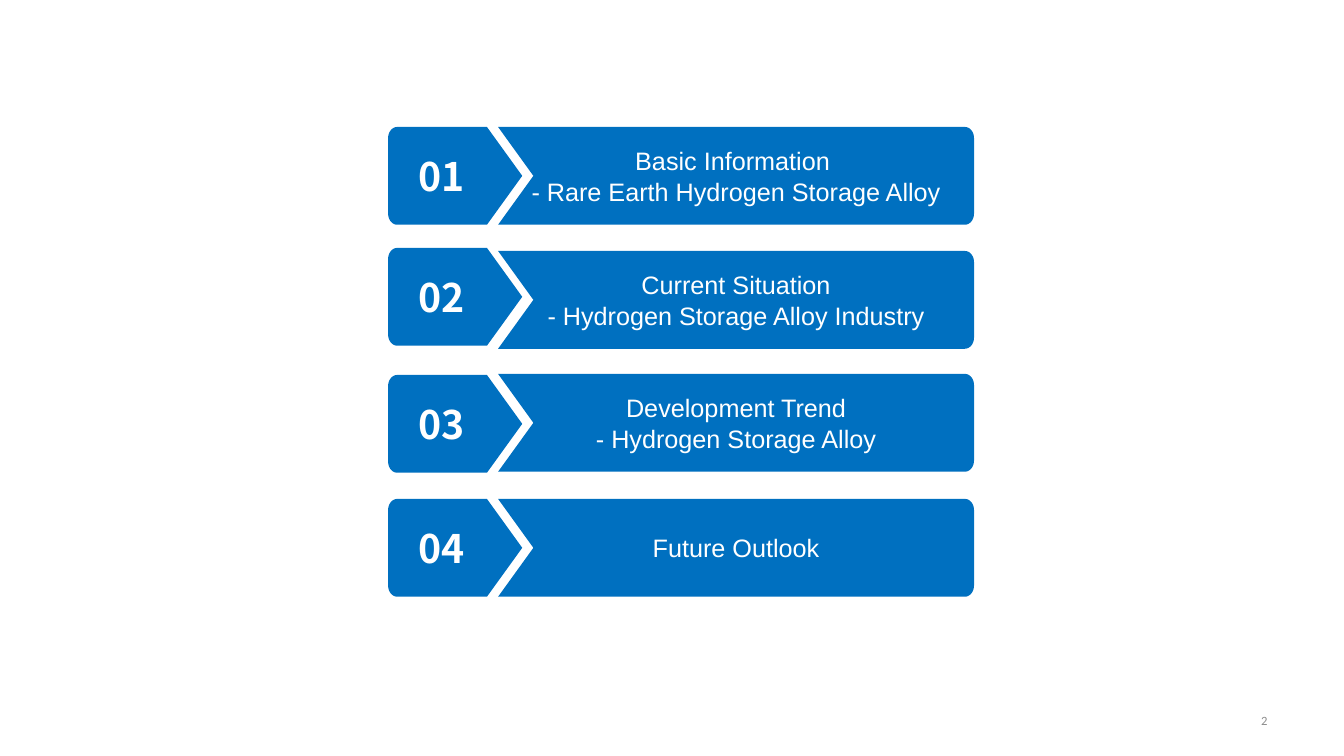
import math

import pptx
import pptx.dml.color
import pptx.enum.text
import pptx.util

PX = 9144
COLORS = {"blue": "0070C0", "white": "FFFFFF", "gray": "8C8C8C"}

LABEL_LEFT, LABEL_RIGHT = 494, 966
BADGE_LEFT, BADGE_RIGHT = 385, 518
ROW_HEIGHT = 97
POINT_DEPTH = 35
CORNER_WIDTH, CORNER_HEIGHT = 9, 11

AGENDA = [
    (126, 126, ["Basic Information ", "- Rare Earth Hydrogen Storage Alloy"]),
    (249, 246, ["Current Situation", "- Hydrogen Storage Alloy Industry"]),
    (371, 372, ["Development Trend", "- Hydrogen Storage Alloy"]),
    (495, 495, ["Future Outlook"]),
]


def px(value):
    return pptx.util.Emu(round(value * PX))


def rgb(name):
    return pptx.dml.color.RGBColor.from_string(COLORS[name])


def corner(center_x, center_y, start_angle):
    angles = [math.radians(start_angle + step * 10) for step in range(10)]
    return [
        (center_x + CORNER_WIDTH * math.cos(angle), center_y + CORNER_HEIGHT * math.sin(angle))
        for angle in angles
    ]


def label_outline(top):
    bottom = top + ROW_HEIGHT
    center_x = LABEL_RIGHT - CORNER_WIDTH
    return [
        (LABEL_LEFT, top),
        *corner(center_x, top + CORNER_HEIGHT, -90),
        *corner(center_x, bottom - CORNER_HEIGHT, 0),
        (LABEL_LEFT, bottom),
        (LABEL_LEFT + POINT_DEPTH, top + ROW_HEIGHT / 2),
    ]


def badge_outline(top):
    bottom = top + ROW_HEIGHT
    shoulder = BADGE_RIGHT - POINT_DEPTH
    center_x = BADGE_LEFT + CORNER_WIDTH
    return [
        (shoulder, top),
        (BADGE_RIGHT, top + ROW_HEIGHT / 2),
        (shoulder, bottom),
        *corner(center_x, bottom - CORNER_HEIGHT, 90),
        *corner(center_x, top + CORNER_HEIGHT, 180),
    ]


def write_text(shape, lines, font_name, size, color, alignment, bold=False):
    frame = shape.text_frame
    frame.word_wrap = True
    frame.vertical_anchor = pptx.enum.text.MSO_ANCHOR.MIDDLE
    frame.text = "\n".join(lines)
    for paragraph in frame.paragraphs:
        paragraph.alignment = alignment
        paragraph.font.name = font_name
        paragraph.font.size = pptx.util.Pt(size)
        paragraph.font.bold = bold
        paragraph.font.color.rgb = rgb(color)


def add_panel(slide, outline, lines, font_name, size, right_inset, bold=False):
    points = [(px(x), px(y)) for x, y in outline]
    builder = slide.shapes.build_freeform(*points[0])
    builder.add_line_segments(points[1:], close=True)
    shape = builder.convert_to_shape()
    shape.shadow.inherit = False
    shape.fill.solid()
    shape.fill.fore_color.rgb = rgb("blue")
    shape.line.fill.background()
    frame = shape.text_frame
    frame.margin_left, frame.margin_right = px(12), px(right_inset)
    frame.margin_top = frame.margin_bottom = px(6)
    write_text(shape, lines, font_name, size, "white", pptx.enum.text.PP_ALIGN.CENTER, bold)


def add_page_number(slide, number):
    box = slide.shapes.add_textbox(px(956), px(695), px(311), px(40))
    write_text(box, [number], "Calibri", 9, "gray", pptx.enum.text.PP_ALIGN.RIGHT)


def main():
    presentation = pptx.Presentation()
    presentation.slide_width = pptx.util.Inches(13.33)
    presentation.slide_height = pptx.util.Inches(7.5)
    slide = presentation.slides.add_slide(presentation.slide_layouts[6])
    add_page_number(slide, "2")
    for number, (label_top, badge_top, lines) in enumerate(AGENDA, start=1):
        add_panel(slide, label_outline(label_top), lines, "Arial", 18, 12)
        add_panel(slide, badge_outline(badge_top), [f"{number:02}"], "Noto Sans CJK SC", 28, 39, True)
    presentation.save("out.pptx")


if __name__ == "__main__":
    main()
